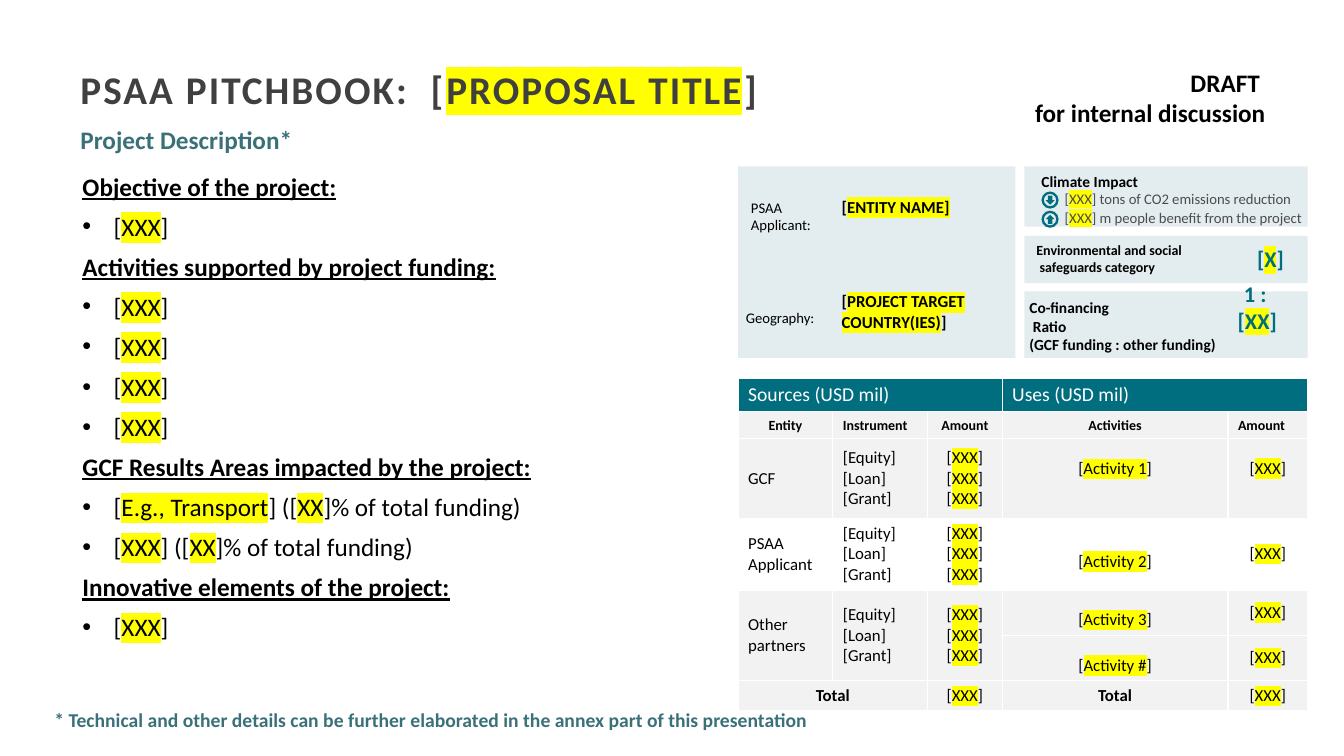
from lxml import etree
from pptx import Presentation
from pptx import util as u
from pptx.dml.color import RGBColor
from pptx.enum import shapes, text
from pptx.oxml.ns import qn

COLORS = {"black": "000000", "white": "FFFFFF", "heading": "404040", "grey": "4C4C4C",
          "teal": "006E7E", "note": "3A7179", "panel": "1F6E7F",
          "band": "F2F2F2", "marker": "FFFF00"}
STEP = u.Inches(0.01)
CENTER, RIGHT = text.PP_ALIGN.CENTER, text.PP_ALIGN.RIGHT
MIDDLE, BOTTOM = text.MSO_ANCHOR.MIDDLE, text.MSO_ANCHOR.BOTTOM
KIND = shapes.MSO_SHAPE

deck = Presentation()
deck.slide_width, deck.slide_height = 1333 * STEP, 750 * STEP
slide = deck.slides.add_slide(deck.slide_layouts[6])


def write(frame, words, size, color="black", layout={}, gap=0, spacing=0, **look):
    for number, line in enumerate(words.split("\n")):
        paragraph = frame.paragraphs[0] if number == 0 else frame.add_paragraph()
        for key, value in layout.items():
            setattr(paragraph, key, value)
        if number and gap:
            paragraph.space_before = u.Pt(gap)
        heading = line.startswith("#")
        if line.startswith("•"):
            props = paragraph._p.get_or_add_pPr()
            props.set("marL", str(31 * STEP))
            props.set("indent", str(-31 * STEP))
            etree.SubElement(props, qn("a:buFont")).set("typeface", "Arial")
            etree.SubElement(props, qn("a:buChar")).set("char", "•")
        for order, part in enumerate(line.lstrip("•#").replace("}", "{").split("{")):
            if not part:
                continue
            run = paragraph.add_run()
            run.text = part
            style = {"size": u.Pt(size), "bold": heading, "underline": heading, **look}
            for key, value in style.items():
                setattr(run.font, key, value)
            run.font.color.rgb = RGBColor.from_string(COLORS[color])
            props = run._r.get_or_add_rPr()
            if spacing:
                props.set("spc", str(spacing))
            if order % 2:
                marker = etree.SubElement(props, qn("a:highlight"))
                etree.SubElement(marker, qn("a:srgbClr")).set("val", COLORS["marker"])
            run.font.name = "Calibri"


def block(kind, place, color, alpha=100):
    shape = slide.shapes.add_shape(kind, *[n * STEP for n in place])
    shape.shadow.inherit = False
    shape.fill.solid()
    shape.fill.fore_color.rgb = RGBColor.from_string(COLORS[color])
    shape.line.fill.background()
    if alpha < 100:
        tint = shape.fill._xPr.find(".//" + qn("a:srgbClr"))
        etree.SubElement(tint, qn("a:alpha")).set("val", str(alpha * 1000))
    return shape


for panel in [(732, 165, 275, 190), (1016, 165, 281, 60), (1016, 234, 281, 47), (1016, 289, 281, 66)]:
    block(KIND.RECTANGLE, panel, "panel", 12)

for top, arrow_kind in [(190, KIND.DOWN_ARROW), (209, KIND.UP_ARROW)]:
    ring = block(KIND.DONUT, (1033, top, 17, 17), "teal")
    ring.adjustments[0] = 0.14
    block(arrow_kind, (1037, top + 4, 9, 9), "teal")

subtitle = block(KIND.RECTANGLE, (70, 118, 304, 40), "white")
subtitle.text_frame.vertical_anchor = MIDDLE
write(subtitle.text_frame, "Project Description*", 18, "note",
      {"alignment": text.PP_ALIGN.LEFT}, bold=True)

description = """#Objective of the project:
•[{XXX}]
#Activities supported by project funding:
•[{XXX}]
•[{XXX}]
•[{XXX}]
•[{XXX}]
#GCF Results Areas impacted by the project:
•[{E.g., Transport}] ([{XX}]% of total funding)
•[{XXX}] ([{XX}]% of total funding)
#Innovative elements of the project:
•[{XXX}]"""
footnote = "* Technical and other details can be further elaborated in the annex part of this presentation"
bold = {"bold": True}
padded, tight = (10, 5), (0, 0)

labels = [
    ((70, 65, 1010, 61), padded, "PSAA PITCHBOOK:  [{PROPOSAL TITLE}]", 28, "heading",
     {"bold": True, "spacing": 150, "layout": {"line_spacing": 0.9}}),
    ((583, 62, 682, 71), padded, "DRAFT \nfor internal discussion", 18, "black",
     {"bold": True, "layout": {"alignment": RIGHT}}),
    ((72, 160, 653, 476), padded, description, 18, "black",
     {"gap": 3.6, "layout": {"line_spacing": u.Pt(25)}}),
    ((735, 192, 109, 45), padded, "PSAA Applicant:", 10.5, "black", {}),
    ((730, 301, 137, 28), padded, "Geography:", 10.5, "black", {}),
    ((825, 190, 168, 30), padded, "[{ENTITY NAME]}", 12, "black", bold),
    ((825, 284, 168, 50), padded, "[{PROJECT TARGET COUNTRY(IES)}]", 12, "black", bold),
    ((1033, 171, 134, 16), tight, "Climate Impact", 11, "black", bold),
    ((1056, 188, 247, 19), tight, "[{XXX}] tons of CO2 emissions reduction", 10.5, "grey", {}),
    ((1056, 207, 271, 17), tight, "[{XXX}] m people benefit from the project", 10.5, "grey", {}),
    ((1028, 240, 220, 34), tight, "Environmental and social\n safeguards category", 10, "black", bold),
    ((1021, 296, 200, 56), tight, "Co-financing\n Ratio\n(GCF funding : other funding)", 11, "black", bold),
    ((1239, 245, 42, 25), tight, "[{X}]", 16, "teal", bold),
    ((1220, 278, 50, 27), tight, "1 :", 16, "teal", bold),
    ((1210, 304, 74, 27), tight, "[{XX}]", 16, "teal", bold),
    ((44, 697, 949, 34), padded, footnote, 14, "note", bold),
]
centered_ratio = {"alignment": CENTER}
for place, (side, edge), words, size, color, look in labels:
    frame = slide.shapes.add_textbox(*[n * STEP for n in place]).text_frame
    margins = {"margin_left": side, "margin_right": side, "margin_top": edge, "margin_bottom": edge}
    for key, value in margins.items():
        setattr(frame, key, value * STEP)
    frame.word_wrap = True
    if size == 16:
        frame.vertical_anchor = BOTTOM
        look = {**look, "layout": centered_ratio}
    write(frame, words, size, color, **look)

columns = [94, 94, 74, 224, 79]
rows = [32, 27, 79, 71, 45, 45, 29]
funding = slide.shapes.add_table(len(rows), len(columns), 732 * STEP, 375 * STEP,
                                 sum(columns) * STEP, sum(rows) * STEP).table
funding.horz_banding = False
for column, width in zip(funding.columns, columns):
    column.width = width * STEP
for row, height in zip(funding.rows, rows):
    row.height = height * STEP

instruments = "[Equity] [Loan]\n[Grant]"
amount = "[{XXX}]"
amounts = "\n".join([amount] * 3)
entries = [
    ["Sources (USD mil)", "", "", "Uses (USD mil)", ""],
    ["Entity", "Instrument", "Amount", "Activities", "Amount"],
    ["GCF", instruments, amounts, "[{Activity 1}]", amount],
    ["PSAA\nApplicant", instruments, amounts, "[{Activity 2}]", amount],
    ["Other partners", instruments, amounts, "[{Activity 3}]", amount],
    ["", "", "", "[{Activity #}]", amount],
    ["Total", "", amount, "Total", amount],
]
for r, entry in enumerate(entries):
    for c, words in enumerate(entry):
        cell = funding.cell(r, c)
        props = cell._tc.get_or_add_tcPr()
        for side in ("lnL", "lnR", "lnT", "lnB"):
            border = etree.SubElement(props, qn("a:" + side), w=str(u.Pt(1)))
            fill = etree.SubElement(border, qn("a:solidFill"))
            etree.SubElement(fill, qn("a:srgbClr")).set("val", COLORS["white"])
        cell.fill.solid()
        shade = {0: "teal", 3: "white"}.get(r, "band")
        cell.fill.fore_color.rgb = RGBColor.from_string(COLORS[shade])
        if r:
            cell.vertical_anchor = MIDDLE
        if not words:
            continue
        layout = {}
        if r and (c > 1 or words in ("Entity", "Total")) and (r, c) != (1, 4):
            layout["alignment"] = CENTER
        if "Activity" in words:
            layout["line_spacing"] = u.Pt(25)
        write(cell.text_frame, words, {0: 14, 1: 10}.get(r, 12),
              "black" if r else "white", layout, bold=r == 1 or words == "Total")

funding.cell(2, 3).margin_bottom = 39 * STEP
funding.cell(2, 4).margin_bottom = 25 * STEP
for first, last in [((0, 0), (0, 2)), ((0, 3), (0, 4)), ((6, 0), (6, 1)),
                    *[((4, c), (5, c)) for c in range(3)]]:
    funding.cell(*first).merge(funding.cell(*last))

deck.save("out.pptx")
